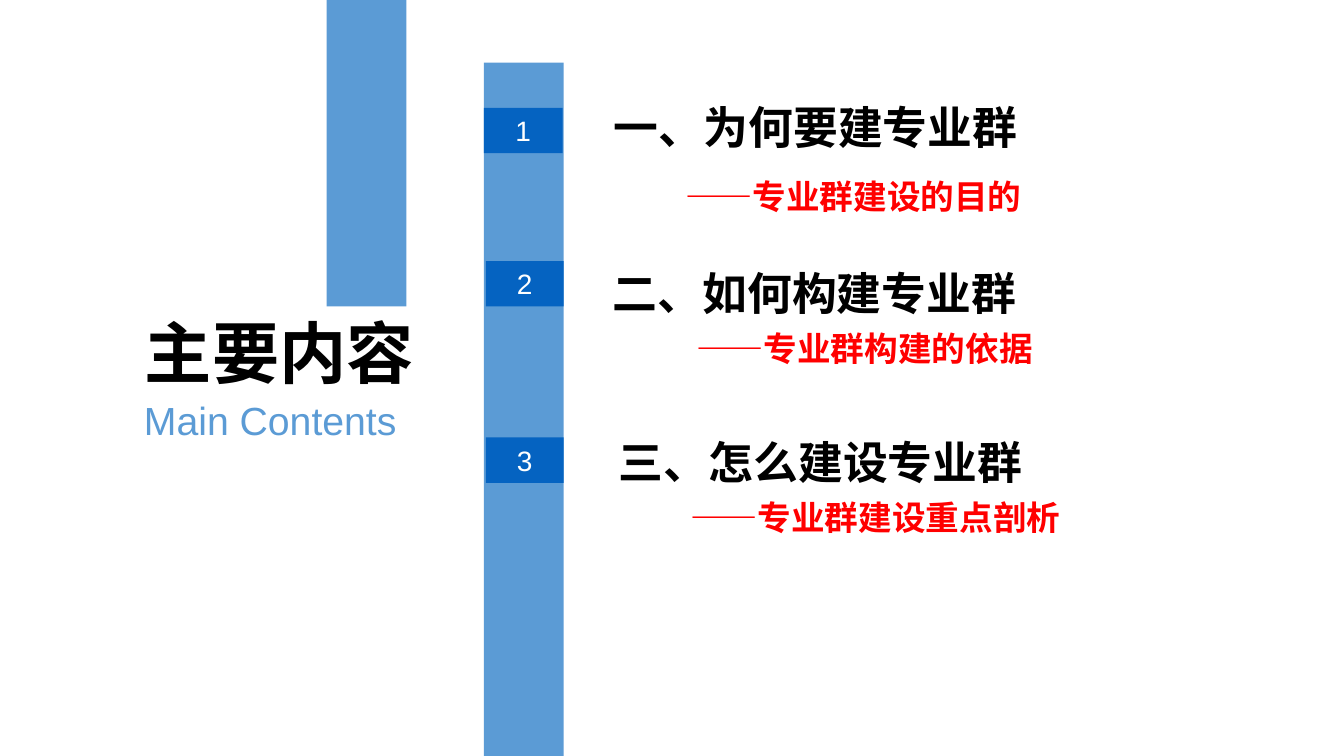
from lxml import etree
from pptx import Presentation
from pptx.dml.color import RGBColor
from pptx.enum import shapes, text
from pptx.oxml.ns import qn
from pptx.util import Inches, Pt

BLUE = RGBColor(0x5B, 0x9B, 0xD5)
DARK_BLUE = RGBColor(0x05, 0x63, 0xC1)
BLACK = RGBColor(0, 0, 0)
RED = RGBColor(0xFF, 0, 0)
WHITE = RGBColor(0xFF, 0xFF, 0xFF)
CJK = "Noto Sans CJK SC"
LATIN = "Arial"

prs = Presentation()
prs.slide_width = Inches(13.33)
prs.slide_height = Inches(7.5)
s = prs.slides.add_slide(prs.slide_layouts[6])


def add_rect(x, y, w, h, color):
    sp = s.shapes.add_shape(shapes.MSO_SHAPE.RECTANGLE,
                            Inches(x), Inches(y), Inches(w), Inches(h))
    sp.shadow.inherit = False
    sp.fill.solid()
    sp.fill.fore_color.rgb = color
    sp.line.fill.background()
    return sp


def write(p, words, size, font, color, bold=False, align=text.PP_ALIGN.LEFT):
    p.text = words
    p.alignment = align
    r = p.runs[0]
    r.font.size = Pt(size)
    r.font.bold = bold
    r.font.name = font
    r.font.color.rgb = color
    etree.SubElement(r._r.get_or_add_rPr(), qn("a:ea")).set("typeface", font)


# Vertical bars
add_rect(3.24, 0, 0.79, 3.04, BLUE)
add_rect(4.8, 0.62, 0.79, 6.88, BLUE)

# Slide title in two languages
titles = [
    (1.22, 3.04, 3.1, 0.91, "主要内容", 48, CJK, BLACK, True, text.PP_ALIGN.CENTER),
    (0.63, 3.88, 3.4, 0.57, "Main Contents", 28, LATIN, BLUE, False, text.PP_ALIGN.RIGHT),
]
for x, y, w, h, *style in titles:
    tf = s.shapes.add_textbox(Inches(x), Inches(y), Inches(w), Inches(h)).text_frame
    tf.word_wrap = True
    write(tf.paragraphs[0], *style)

# Chapters: box, subtitle indent and gap, heading, subtitle, number marker
chapters = [
    (5.79, 0.83, 6.05, 2.04, 0.91, 10.5, "一、为何要建专业群", "——专业群建设的目的", 4.8, 1.07, 0.78),
    (5.78, 2.48, 6.05, 1.23, 1.03, 0, "二、如何构建专业群", "——专业群构建的依据", 4.82, 2.59, 0.77),
    (5.84, 4.16, 6.51, 3.09, 0.91, 0, "三、怎么建设专业群", "——专业群建设重点剖析", 4.82, 4.34, 0.77),
]
for number, chapter in enumerate(chapters, 1):
    x, y, w, h, indent, gap, heading, subtitle, mark_x, mark_y, mark_w = chapter
    tf = s.shapes.add_textbox(Inches(x), Inches(y), Inches(w), Inches(h)).text_frame
    tf.word_wrap = True
    lines = [(heading, 32, BLACK, 0.2), (subtitle, 24, RED, indent)]
    for i, (words, size, color, left) in enumerate(lines):
        p = tf.paragraphs[0] if i == 0 else tf.add_paragraph()
        write(p, words, size, CJK, color, bold=True)
        p.line_spacing = 1.2
        p._p.get_or_add_pPr().set("marL", str(Inches(left)))
    if gap:
        p.space_before = Pt(gap)

    marker = add_rect(mark_x, mark_y, mark_w, 0.45, DARK_BLUE)
    marker.text_frame.vertical_anchor = text.MSO_ANCHOR.MIDDLE
    write(marker.text_frame.paragraphs[0], str(number), 20, LATIN, WHITE,
          align=text.PP_ALIGN.CENTER)

prs.save("out.pptx")
